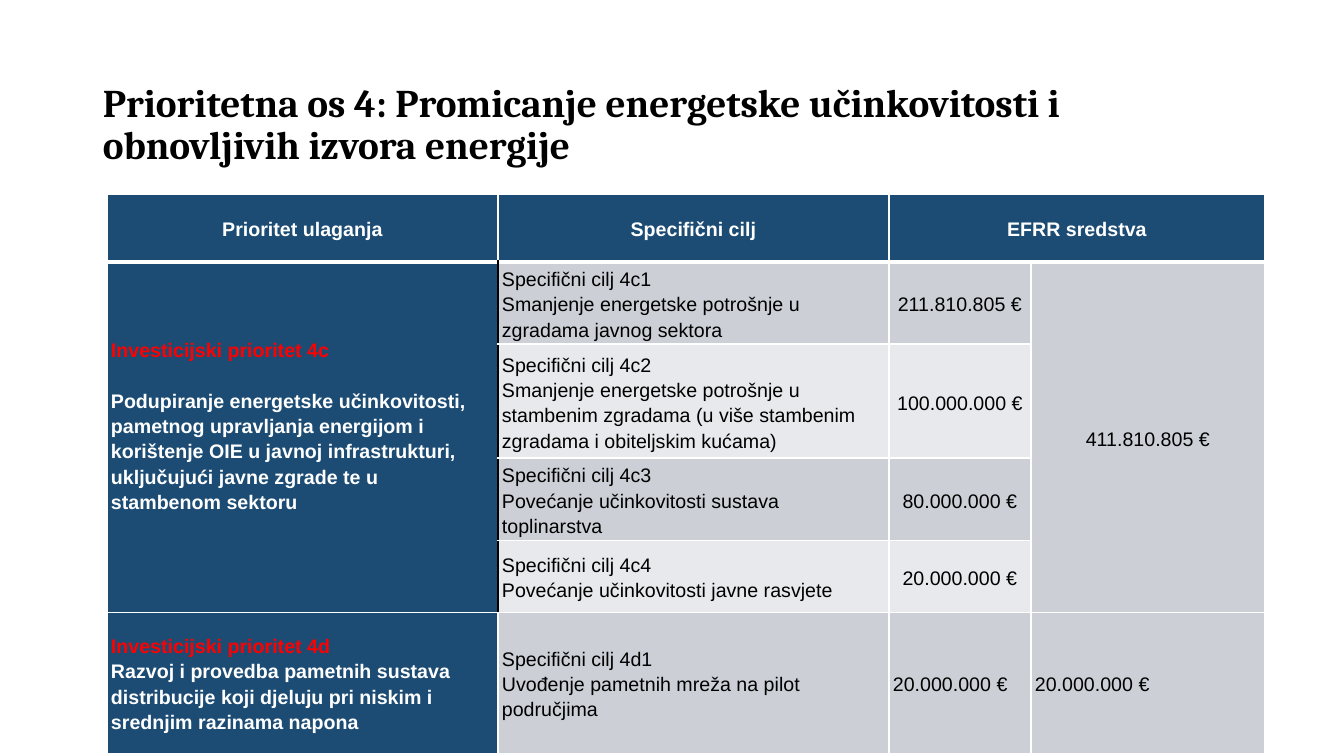
import pptx
import pptx.util
import pptx.dml.color
import pptx.enum.text
import pptx.oxml

SCALE = 914400 / 100.8
HUES = {"navy": "1C4C74", "dark": "CCD0D6", "light": "E7E9EC",
        "white": "FFFFFF", "black": "000000", "red": "FF0000"}
MID = pptx.enum.text.MSO_ANCHOR.MIDDLE
LEFT = pptx.enum.text.PP_ALIGN.LEFT
CENTER = pptx.enum.text.PP_ALIGN.CENTER
COLS = [391, 391, 142, 234]
ROWS = [68, 77, 114, 76, 72, 141]
HEADS = ["Prioritet ulaganja", "Specifični cilj", "EFRR sredstva"]
AIMS = [
    ("Specifični cilj 4c1", "Smanjenje energetske potrošnje u zgradama javnog sektora"),
    ("Specifični cilj 4c2", "Smanjenje energetske potrošnje u stambenim zgradama "
     "(u više stambenim zgradama i obiteljskim kućama)"),
    ("Specifični cilj 4c3", "Povećanje učinkovitosti sustava toplinarstva"),
    ("Specifični cilj 4c4", "Povećanje učinkovitosti javne rasvjete"),
    ("Specifični cilj 4d1", "Uvođenje pametnih mreža na pilot područjima"),
]
SUMS = ["211.810.805 €", "100.000.000 €", "80.000.000 €", "20.000.000 €", "20.000.000 €"]
GOALS = {
    1: ("Investicijski prioritet 4c",
        "Podupiranje energetske učinkovitosti, pametnog upravljanja energijom i "
        "korištenje OIE u javnoj infrastrukturi, uključujući javne zgrade te u "
        "stambenom sektoru"),
    5: ("Investicijski prioritet 4d",
        "Razvoj i provedba pametnih sustava distribucije koji djeluju pri niskim i "
        "srednjim razinama napona"),
}
TOTALS = {1: "411.810.805 €", 5: "20.000.000 €"}


def px(n):
    """Turn pixels into EMU."""
    return pptx.util.Emu(round(n * SCALE))


def style(para, face, size, hue, bold):
    """Set the font of a paragraph."""
    font = para.font
    font.name, font.size, font.bold = face, pptx.util.Pt(size), bold
    font.color.rgb = pptx.dml.color.RGBColor.from_string(HUES[hue])


def edge(cell, sides):
    """Draw cell borders from a list of side, colour and point width."""
    for i, (side, hue, width) in enumerate(sides):
        line = pptx.oxml.parse_xml(
            '<a:ln%s xmlns:a="http://schemas.openxmlformats.org/drawingml/2006/main"'
            ' w="%d"><a:solidFill><a:srgbClr val="%s"/></a:solidFill></a:ln%s>'
            % (side, width * 12700, HUES[hue], side))
        cell._tc.get_or_add_tcPr().insert(i, line)


def write(cell, lines, hues, bold=False, align=LEFT):
    """Fill a cell with one paragraph per line."""
    cell.text_frame.text = "\n".join(lines)
    for para, hue in zip(cell.text_frame.paragraphs, hues):
        style(para, "Arial", 14, hue, bold)
        para.alignment, para.line_spacing = align, 1.15


def title(slide, left, top, width, height):
    """Place the heading in its box."""
    frame = slide.shapes.add_textbox(px(left), px(top), px(width), px(height)).text_frame
    frame.word_wrap, frame.vertical_anchor = True, MID
    frame.margin_top = px(31)
    para = frame.paragraphs[0]
    para.text = "Prioritetna os 4: Promicanje energetske učinkovitosti i obnovljivih izvora energije"
    para.line_spacing = 0.9
    style(para, "Cambria", 28, "black", True)


def dress(grid):
    """Give every cell its fill, margins and borders."""
    for r in range(len(ROWS)):
        for c in range(len(COLS)):
            cell = grid.cell(r, c)
            cell.vertical_anchor = MID
            cell.margin_left = cell.margin_right = px(4)
            cell.margin_top, cell.margin_bottom = px(1), 0
            banded = r in (2, 4) and c in (1, 2)
            hue = "navy" if r == 0 or c == 0 else "light" if banded else "dark"
            cell.fill.solid()
            cell.fill.fore_color.rgb = pptx.dml.color.RGBColor.from_string(HUES[hue])
            inner = 1 <= r <= 4
            edge(cell, [("L", "black" if inner and c == 1 else "white", 1),
                        ("R", "black" if inner and c == 0 else "white", 1),
                        ("T", "white", 3 if r == 1 else 1),
                        ("B", "white", 3 if r == 0 else 1)])


def table(slide, left, top):
    """Place the table of priorities, aims and funds."""
    grid = slide.shapes.add_table(len(ROWS), len(COLS), px(left), px(top),
                                  px(sum(COLS)), px(sum(ROWS))).table
    for col, width in zip(grid.columns, COLS):
        col.width = px(width)
    for row, height in zip(grid.rows, ROWS):
        row.height = px(height)
    dress(grid)
    grid.cell(0, 2).merge(grid.cell(0, 3))
    for c in (0, 3):
        grid.cell(1, c).merge(grid.cell(4, c))
    for c, head in enumerate(HEADS):
        write(grid.cell(0, c), [head], ["white"], True, CENTER)
    for r, (aim, fund) in enumerate(zip(AIMS, SUMS), 1):
        write(grid.cell(r, 1), aim, ["black"] * 2)
        write(grid.cell(r, 2), [fund], ["black"], align=LEFT if r == 5 else CENTER)
    for r, goal in GOALS.items():
        write(grid.cell(r, 0), goal, ["red", "white"], True)
        write(grid.cell(r, 3), [TOTALS[r]], ["black"], align=LEFT if r == 5 else CENTER)
    first = grid.cell(1, 0)
    first.margin_bottom = px(25)
    first.text_frame.paragraphs[0].space_after = pptx.util.Pt(18)


def main():
    """Build and save the slide."""
    deck = pptx.Presentation()
    deck.slide_width, deck.slide_height = px(1344), px(756)
    slide = deck.slides.add_slide(deck.slide_layouts[6])
    title(slide, 93, 40, 1159, 146)
    table(slide, 107, 194)
    deck.save("out.pptx")


if __name__ == "__main__":
    main()
